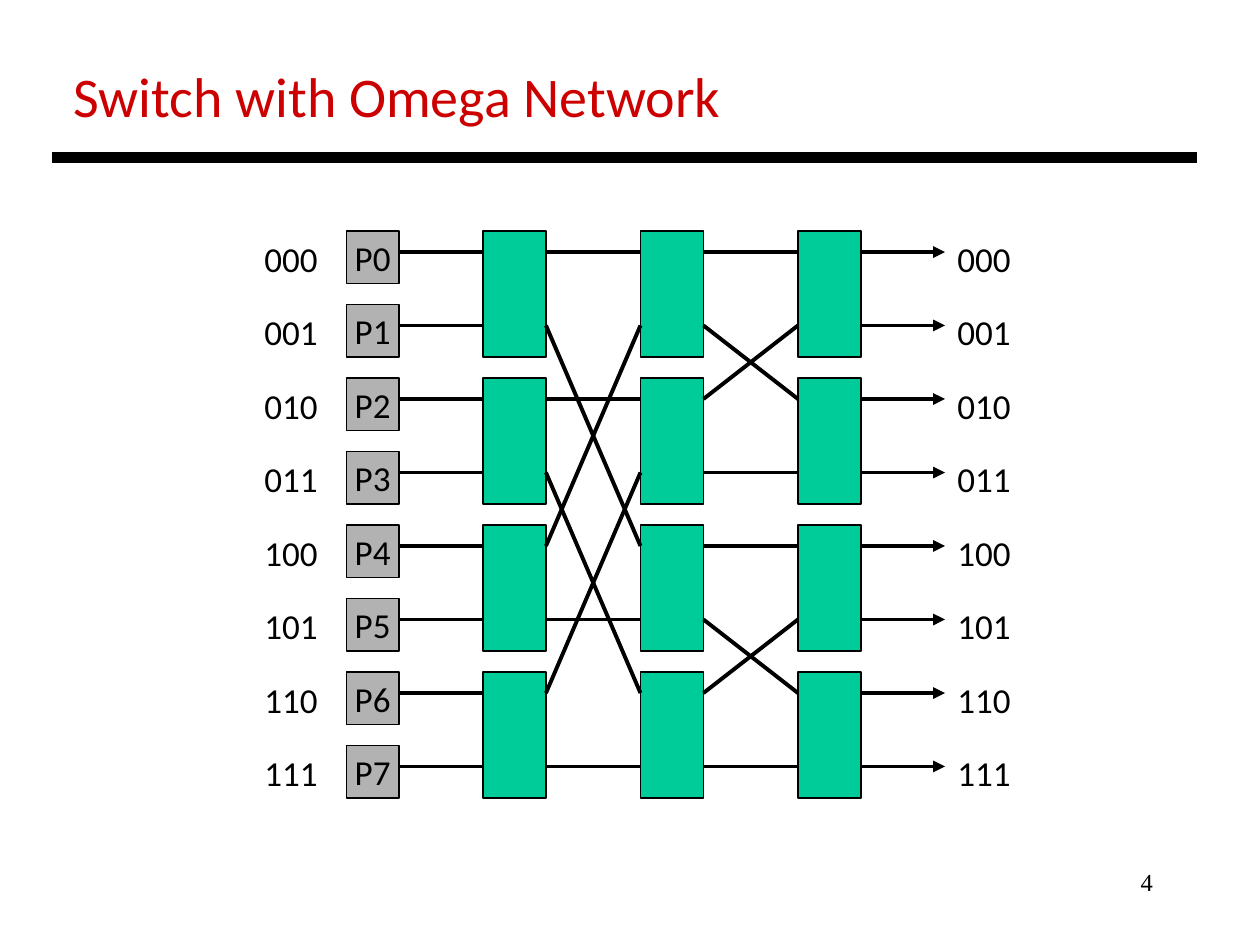
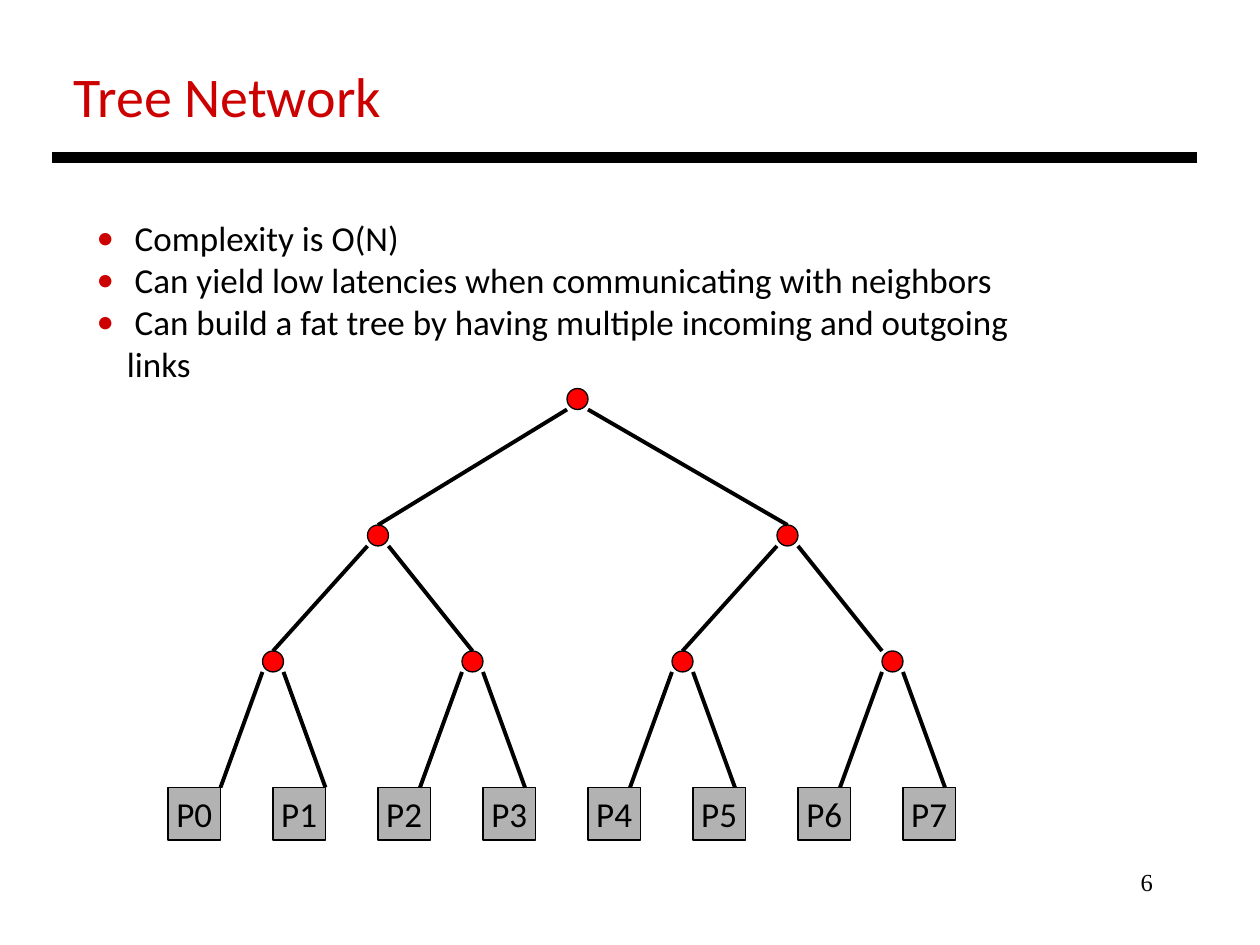
from lxml import etree
from pptx import Presentation, util as u
from pptx.dml.color import RGBColor
from pptx.enum import shapes, text
from pptx.oxml.ns import qn

BLACK, RED, GRAY, GREEN, NODE_RED = "000000", "CC0000", "B2B2B2", "00CC99", "FF0000"
RECT, OVAL = shapes.MSO_SHAPE.RECTANGLE, shapes.MSO_SHAPE.OVAL
LEFT, CENTER, RIGHT = text.PP_ALIGN.LEFT, text.PP_ALIGN.CENTER, text.PP_ALIGN.RIGHT

deck = Presentation()
deck.slide_width, deck.slide_height = u.Inches(10), u.Inches(7.5)
CELL = deck.slide_width // 120  # the slide is a grid of 120 columns by 90 rows


def grid(*cells):
    return [u.Emu(round(cell * CELL)) for cell in cells]


def write(shape, words, size, color=BLACK, align=LEFT, font="Calibri", wrap=False):
    frame = shape.text_frame
    frame.text = words
    frame.auto_size = text.MSO_AUTO_SIZE.NONE
    frame.word_wrap = wrap
    for para in frame.paragraphs:
        para.alignment = align
        para.space_before = u.Pt(0)
        for span in para.runs:
            span.font.name, span.font.size = font, u.Pt(size)
            span.font.color.rgb = RGBColor.from_string(color)


# Pages: title, page number and the start of the line list with the title rule
lines = []  # page, start column and row, end column and row, weight, arrow
pages = []
for layout, heading, number in ((5, "Switch with Omega Network", "4"),
                                (1, "Tree Network", "6")):
    page = deck.slides.add_slide(deck.slide_layouts[layout])
    pages.append(page)
    title = page.shapes.title
    title.left, title.top, title.width, title.height = grid(5.8, 5.2, 100, 7.7)
    write(title, heading, 32, RED)
    footer = page.shapes.add_textbox(*grid(86, 82, 25, 6))
    write(footer, number, 14, align=RIGHT, font="Times New Roman", wrap=True)
    lines.append((page, 5, 15, 114, 15, 6, False))
omega, tree = pages

blocks = []  # page, outline, column, row, width, height, fill, words

# Omega network: eight lanes through three stages of four switches
TOP, LANE = 22, 7
STAGES, SWITCH_WIDTH = (46, 61, 76), 6
PROCESSOR_COLUMN, PROCESSOR_SIZE, OUTPUT_COLUMN = 33, 5, 90
for column in STAGES:
    for switch in range(4):
        blocks.append((omega, RECT, column, TOP + 2 * LANE * switch,
                       SWITCH_WIDTH, 12, GREEN, ""))

straight = range(8)
wirings = (straight, (0, 4, 2, 6, 1, 5, 3, 7), (0, 2, 1, 3, 4, 6, 5, 7), straight)
starts = [PROCESSOR_COLUMN + PROCESSOR_SIZE] + [c + SWITCH_WIDTH for c in STAGES]
ends = [*STAGES, OUTPUT_COLUMN]
for start, end, wiring in zip(starts, ends, wirings):
    for source, target in enumerate(wiring):
        lines.append((omega, start, TOP + 2 + LANE * source,
                      end, TOP + 2 + LANE * target, 2.25, end == OUTPUT_COLUMN))

for lane in range(8):
    blocks.append((omega, RECT, PROCESSOR_COLUMN, TOP + LANE * lane,
                   PROCESSOR_SIZE, PROCESSOR_SIZE, GRAY, f"P{lane}"))
    for column in (24, OUTPUT_COLUMN):
        label = omega.shapes.add_textbox(*grid(column, TOP + LANE * lane, 7.6, 5.3))
        write(label, f"{lane:03b}", 20)

# Tree network: bullet list
body = tree.placeholders[1]
body.left, body.top, body.width, body.height = grid(8, 20, 94, 17)
write(body, "\n".join((
    " Complexity is O(N)",
    " Can yield low latencies when communicating with neighbors",
    " Can build a fat tree by having multiple incoming and outgoing links",
)), 20, wrap=True)
for para in body.text_frame.paragraphs:
    props = para._p.get_or_add_pPr()
    props.set("marL", str(u.Inches(0.24)))
    props.set("indent", str(-u.Inches(0.24)))
    color = etree.SubElement(props, qn("a:buClr"))
    etree.SubElement(color, qn("a:srgbClr"), val=RED)
    etree.SubElement(props, qn("a:buFont"), typeface="Calibri")
    etree.SubElement(props, qn("a:buChar"), char="•")

# Tree network: processors, then each node with the ends of its two branches
LEAF_ROW, NODE_SIZE = 75, 2
for leaf in range(8):
    blocks.append((tree, RECT, 16 + 10 * leaf, LEAF_ROW,
                   PROCESSOR_SIZE, PROCESSOR_SIZE, GRAY, f"P{leaf}"))
nodes = [(54, 37, 36, 75, 50), (35, 50, 26, 45, 62), (74, 50, 65, 84, 62)]
nodes += [(column, 62, column - 4, column + 6, LEAF_ROW) for column in (25, 44, 64, 84)]
for column, row, left_end, right_end, end_row in nodes:
    blocks.append((tree, OVAL, column, row, NODE_SIZE, NODE_SIZE, NODE_RED, ""))
    for start, end in ((column, left_end), (column + NODE_SIZE, right_end)):
        lines.append((tree, start, row + NODE_SIZE, end, end_row, 2.25, False))

# Draw the blocks
for page, outline, column, row, width, height, fill, words in blocks:
    box = page.shapes.add_shape(outline, *grid(column, row, width, height))
    box.shadow.inherit = False
    box.fill.solid()
    box.fill.fore_color.rgb = RGBColor.from_string(fill)
    box.line.color.rgb = RGBColor.from_string(BLACK)
    box.line.width = u.Pt(0.75)
    if words:
        write(box, words, 20, align=CENTER)
        box.text_frame.vertical_anchor = text.MSO_ANCHOR.MIDDLE

# Draw the lines
for page, column, row, end_column, end_row, weight, arrow in lines:
    line = page.shapes.add_connector(shapes.MSO_CONNECTOR.STRAIGHT,
                                     *grid(column, row, end_column, end_row))
    line.line.color.rgb = RGBColor.from_string(BLACK)
    line.line.width = u.Pt(weight)
    if arrow:
        etree.SubElement(line.line._get_or_add_ln(), qn("a:tailEnd"), type="triangle")
    etree.SubElement(line._element.spPr, qn("a:effectLst"))

deck.save("out.pptx")
